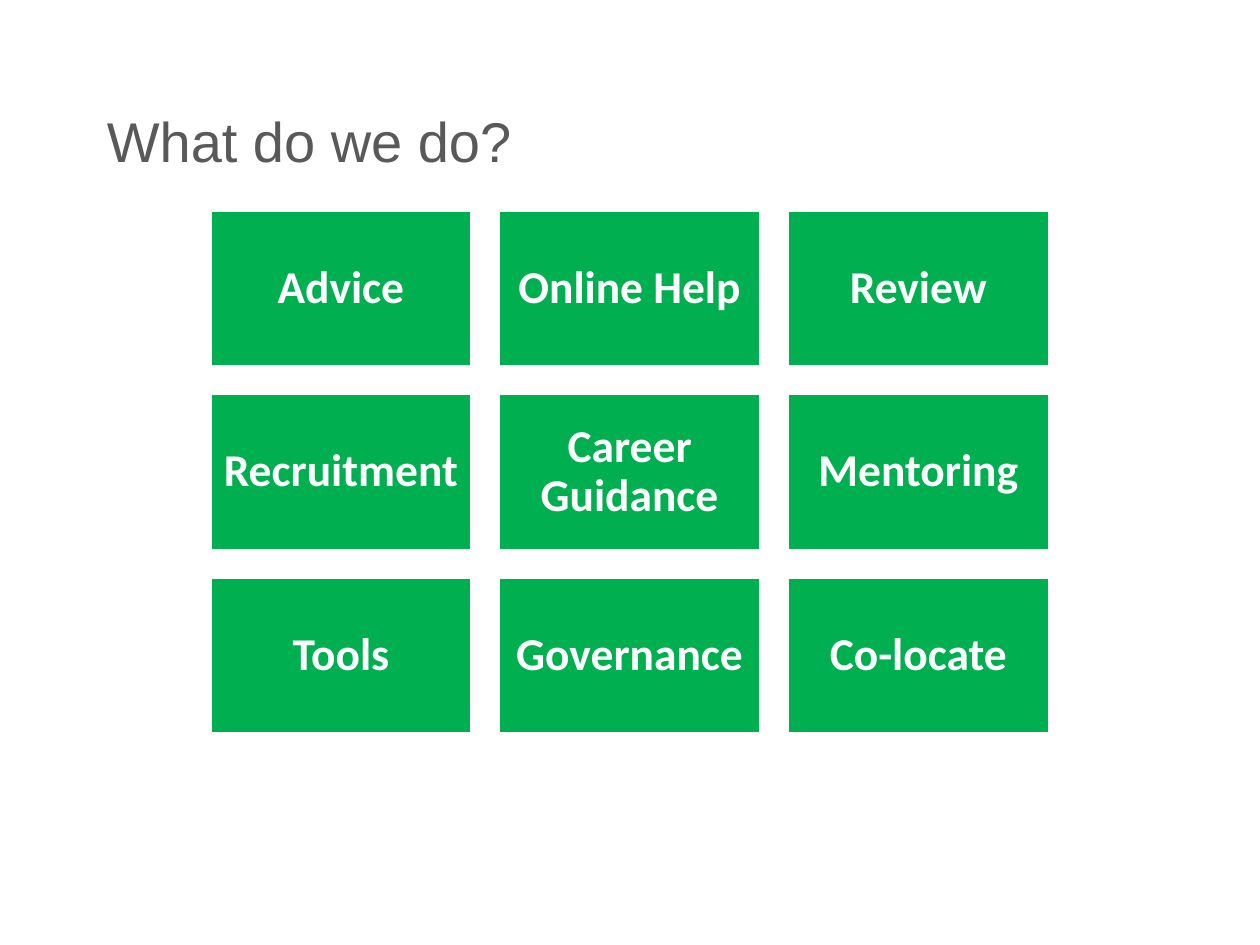
from pptx import Presentation
from pptx.dml.color import RGBColor
from pptx.enum.shapes import MSO_SHAPE
from pptx.enum.text import MSO_ANCHOR, PP_ALIGN
from pptx.util import Cm, Pt

COLORS = {"title": "595959", "tile": "00B050", "white": "FFFFFF"}
FONTS = {
    "title": {"name": "Arial", "size": Pt(32), "bold": False},
    "tile": {"name": "Calibri", "size": Pt(26), "bold": True},
}
FRAMES = {
    "title": {"vertical_anchor": MSO_ANCHOR.TOP, "margin_top": Cm(0.25)},
    "tile": {
        "vertical_anchor": MSO_ANCHOR.MIDDLE,
        "margin_left": Cm(0.25),
        "margin_right": Cm(0.25),
    },
}
PARAS = {
    "title": {"alignment": PP_ALIGN.LEFT},
    "tile": {"alignment": PP_ALIGN.CENTER, "line_spacing": 0.9},
}
SERVICES = [
    ["Advice", "Online Help", "Review"],
    ["Recruitment", "Career Guidance", "Mentoring"],
    ["Tools", "Governance", "Co-locate"],
]
LEFT, TOP = 4.23, 4.23
WIDTH, HEIGHT, GAP = 5.29, 3.17, 0.53


def assign(target, values):
    for name, value in values.items():
        setattr(target, name, value)


class Deck:
    def __init__(self):
        self.file = Presentation()
        self.file.slide_width = Cm(25.4)
        self.file.slide_height = Cm(19.05)
        self.slide = self.file.slides.add_slide(self.file.slide_layouts[5])

    def color(self, name):
        return RGBColor.from_string(COLORS[name])

    def label(self, shape, text, style, ink):
        frame = shape.text_frame
        frame.text = text
        frame.word_wrap = True
        assign(frame, FRAMES[style])
        para = frame.paragraphs[0]
        assign(para, PARAS[style])
        assign(para.font, FONTS[style])
        para.font.color.rgb = self.color(ink)

    def title(self, text, left, top, width, height):
        shape = self.slide.shapes.title
        box = {"left": left, "top": top, "width": width, "height": height}
        assign(shape, {name: Cm(value) for name, value in box.items()})
        self.label(shape, text, "title", "title")

    def tile(self, group, text, left, top):
        shape = group.shapes.add_shape(
            MSO_SHAPE.RECTANGLE, Cm(left), Cm(top), Cm(WIDTH), Cm(HEIGHT)
        )
        shape.shadow.inherit = False
        shape.fill.solid()
        shape.fill.fore_color.rgb = self.color("tile")
        shape.line.color.rgb = self.color("white")
        shape.line.width = Pt(2)
        self.label(shape, text, "tile", "white")

    def grid(self, rows):
        group = self.slide.shapes.add_group_shape()
        for row, names in enumerate(rows):
            for col, name in enumerate(names):
                left = LEFT + col * (WIDTH + GAP)
                top = TOP + row * (HEIGHT + GAP)
                self.tile(group, name, left, top)


def main():
    deck = Deck()
    deck.title("What do we do?", 1.9, 1.9, 20.52, 2.03)
    deck.grid(SERVICES)
    deck.file.save("out.pptx")


if __name__ == "__main__":
    main()
